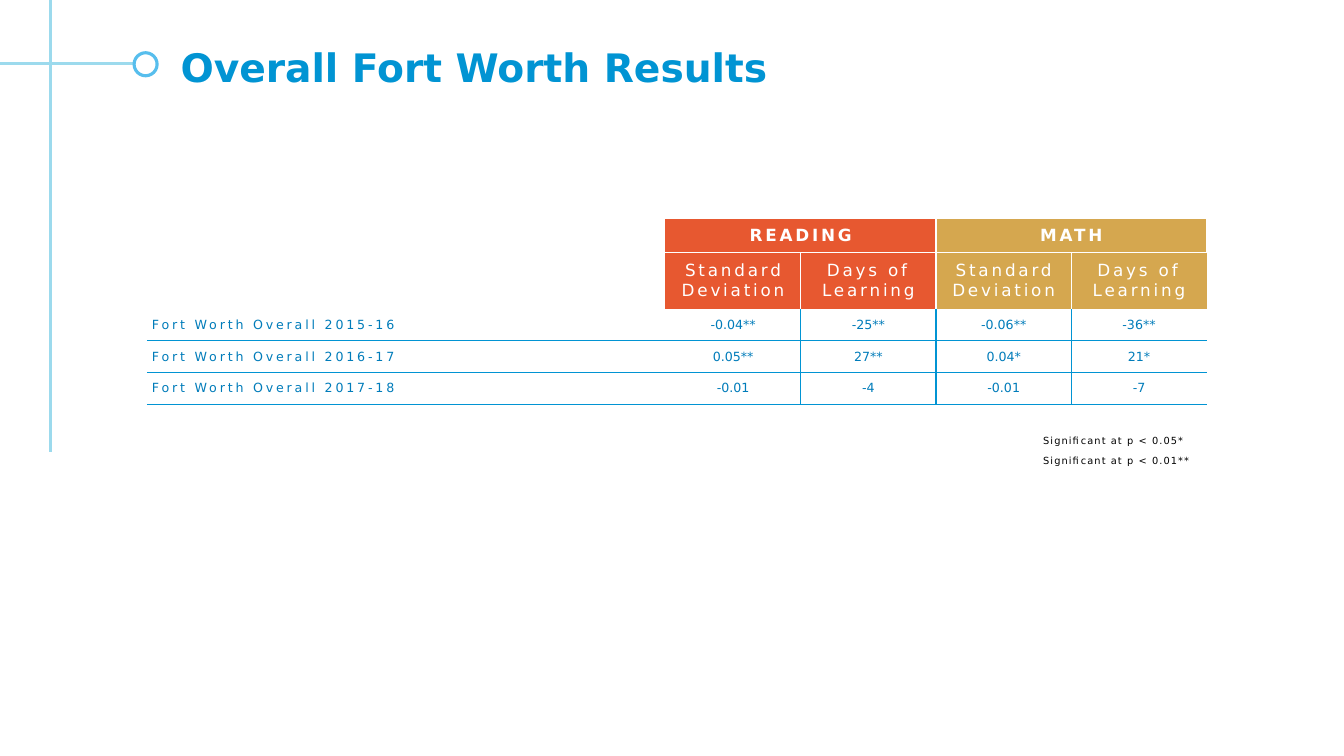
from lxml import etree
from pptx import Presentation
from pptx.dml.color import RGBColor
from pptx.enum.shapes import MSO_CONNECTOR, MSO_SHAPE
from pptx.enum.text import MSO_ANCHOR, PP_ALIGN
from pptx.oxml.ns import qn
from pptx.util import Cm, Pt

STRAIGHT, OVAL = MSO_CONNECTOR.STRAIGHT, MSO_SHAPE.OVAL
TOP, MIDDLE = MSO_ANCHOR.TOP, MSO_ANCHOR.MIDDLE
LEFT, CENTER = PP_ALIGN.LEFT, PP_ALIGN.CENTER

COLORS = {"title": "0194D3", "body": "007CBA", "rule": "9CDAED", "ring": "57BEED",
          "reading": "E75830", "math": "D5A74F", "white": "FFFFFF", "black": "000000"}
NO_STYLE = "{2D5ABB26-0587-4C30-8999-92F81FD0307C}"


def rgb(name):
    return RGBColor.from_string(COLORS[name])


def write(tf, text, size=9, color="body", bold=False, align=LEFT, spacing=0,
          after=0, hanging=0, font="DejaVu Sans"):
    """Fill a text frame, one paragraph for each line of text."""
    for i, line in enumerate(text.split("\n")):
        p = tf.paragraphs[0] if i == 0 else tf.add_paragraph()
        p.alignment = align
        p.space_after = Pt(after)
        if hanging:
            pPr = p._p.get_or_add_pPr()
            pPr.set("marL", str(Cm(hanging)))
            pPr.set("indent", str(-Cm(hanging)))
        r = p.add_run()
        r.text = line
        r.font.name, r.font.size, r.font.bold = font, Pt(size), bold
        r.font.color.rgb = rgb(color)
        r._r.get_or_add_rPr().set("spc", str(int(spacing * 100)))


class Deck:
    def __init__(self):
        self.prs = Presentation()
        self.prs.slide_width, self.prs.slide_height = Cm(33.87), Cm(19.05)
        self.s = self.prs.slides.add_slide(self.prs.slide_layouts[6])

    def line(self, x1, y1, x2, y2, color="rule", width=2.25):
        sp = self.s.shapes.add_connector(STRAIGHT, Cm(x1), Cm(y1), Cm(x2), Cm(y2))
        sp.line.color.rgb = rgb(color)
        sp.line.width = Pt(width)
        etree.SubElement(sp._element.spPr, qn("a:effectLst"))

    def ring(self, x, y, size):
        sp = self.s.shapes.add_shape(OVAL, Cm(x), Cm(y), Cm(size), Cm(size))
        sp.shadow.inherit = False
        sp.fill.solid()
        sp.fill.fore_color.rgb = rgb("white")
        sp.line.color.rgb = rgb("ring")
        sp.line.width = Pt(2.25)

    def text(self, x, y, w, h, text, anchor=TOP, **style):
        tf = self.s.shapes.add_textbox(Cm(x), Cm(y), Cm(w), Cm(h)).text_frame
        tf.word_wrap = True
        tf.vertical_anchor = anchor
        write(tf, text, **style)

    def table(self, x, y, widths, heights):
        frame = self.s.shapes.add_table(len(heights), len(widths), Cm(x), Cm(y),
                                        Cm(sum(widths)), Cm(sum(heights)))
        table = frame.table
        table.first_row = table.horz_banding = False
        table._tbl.tblPr.find(qn("a:tableStyleId")).text = NO_STYLE
        for col, w in zip(table.columns, widths):
            col.width = Cm(w)
        for row, h in zip(table.rows, heights):
            row.height = Cm(h)
        return table

    def cell(self, cell, text, fill=None, edges="", edge_color="title",
             inset=(0.13, 0.08), **style):
        tcPr = cell._tc.get_or_add_tcPr()
        for edge in edges:
            ln = etree.SubElement(tcPr, qn("a:ln" + edge), w=str(Pt(1)))
            solid = etree.SubElement(ln, qn("a:solidFill"))
            etree.SubElement(solid, qn("a:srgbClr"), val=COLORS[edge_color])
        if fill:
            cell.fill.solid()
            cell.fill.fore_color.rgb = rgb(fill)
        else:
            cell.fill.background()
        cell.margin_left = cell.margin_right = Cm(inset[0])
        cell.margin_top = cell.margin_bottom = Cm(inset[1])
        cell.vertical_anchor = MIDDLE
        if text:
            write(cell.text_frame, text, **style)


def edges_of(row, col):
    """Inner lines of the grid, plus a line under every body row."""
    if row < 2 and col == 0:
        return ""
    return (("L" if col > 1 else "") + ("R" if 0 < col < 4 else "")
            + ("T" if row not in (0, 2) else "") + ("B" if row != 1 else ""))


def main():
    deck = Deck()

    # Corner lines and ring
    deck.line(1.27, 0, 1.27, 11.4)
    deck.line(3.38, 1.6, 0, 1.6)
    deck.ring(3.38, 1.33, 0.58)

    # Title and significance notes
    deck.text(4.3, 0.97, 28.8, 1.42, "Overall Fort Worth Results", anchor=MIDDLE,
              size=28, color="title", bold=True)
    deck.text(26.04, 10.82, 4.65, 1.42,
              "Significant at p < 0.05*\nSignificant at p < 0.01**",
              size=7, color="black", spacing=0.8, after=6, hanging=0.64)

    # Results table
    measures = ["Standard\nDeviation", "Days of Learning"]
    rows = [
        ["", "READING", "", "MATH", ""],
        [""] + measures * 2,
        ["Fort Worth Overall 2015-16", "-0.04**", "-25**", "-0.06**", "-36**"],
        ["Fort Worth Overall 2016-17", "0.05**", "27**", "0.04*", "21*"],
        ["Fort Worth Overall 2017-18", "-0.01", "-4", "-0.01", "-7"],
    ]
    table = deck.table(3.7, 5.53, [13.07] + [3.41] * 4, [0.84, 1.42] + [0.8] * 3)
    table.cell(0, 0).merge(table.cell(1, 0))
    for col in (1, 3):
        table.cell(0, col).merge(table.cell(0, col + 1))
    for i, row in enumerate(rows):
        for j, text in enumerate(row):
            if i < 2:
                style = dict(fill=[None, "reading", "reading", "math", "math"][j],
                             edge_color="white", color="white", size=12,
                             bold=i == 0, align=CENTER, spacing=2)
            elif j == 0:
                style = dict(spacing=2)
            else:
                style = dict(align=CENTER, inset=(0.03, 0.02))
            deck.cell(table.cell(i, j), text, edges=edges_of(i, j), **style)

    deck.prs.save("out.pptx")


if __name__ == "__main__":
    main()
